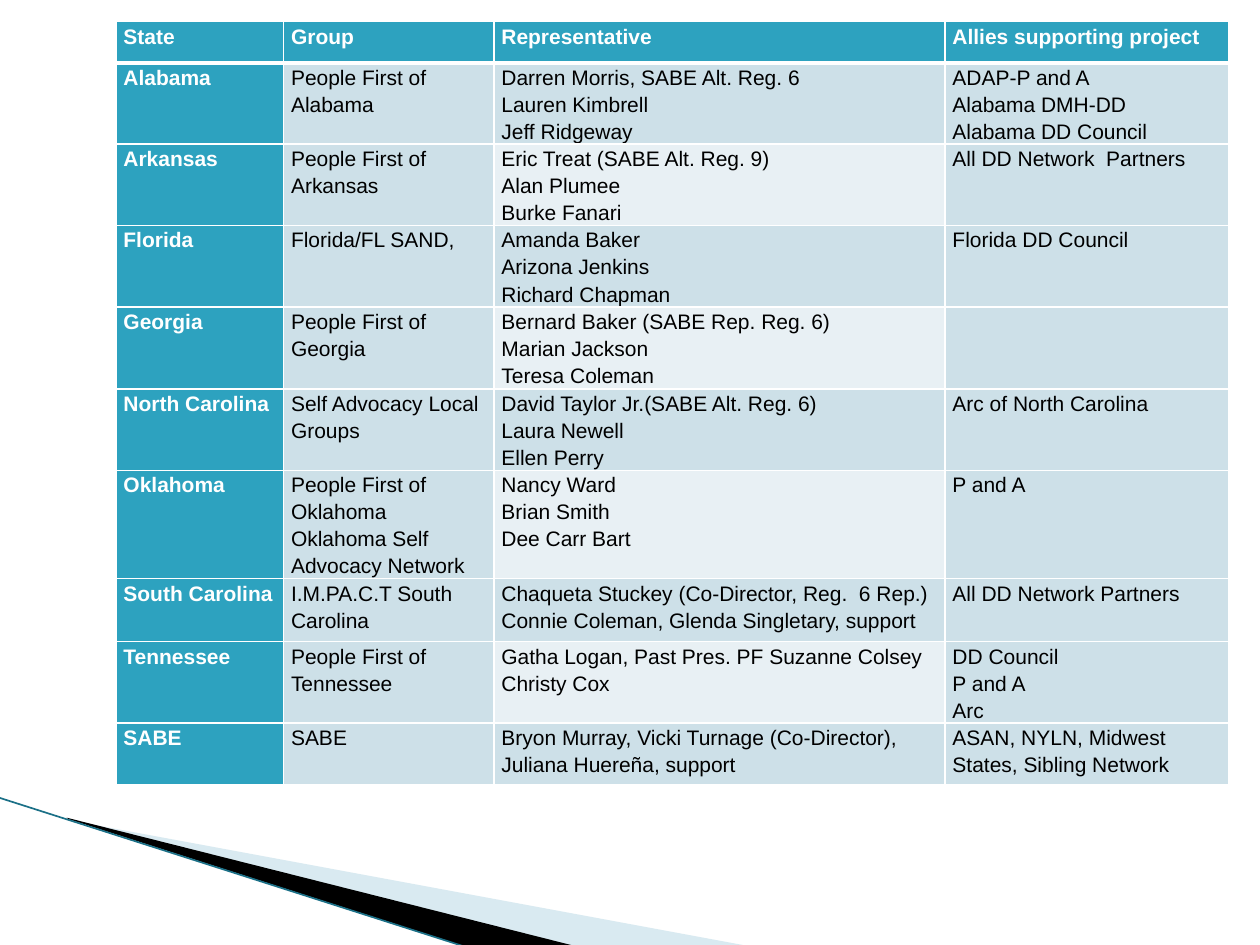
import pptx
import pptx.util
import pptx.dml.color
import pptx.enum.shapes
import pptx.oxml
import pptx.oxml.ns

Inches, Pt = pptx.util.Inches, pptx.util.Pt
RGBColor = pptx.dml.color.RGBColor
qn = pptx.oxml.ns.qn

WHITE = RGBColor(0xFF, 0xFF, 0xFF)
BLACK = RGBColor(0x00, 0x00, 0x00)
TEAL = RGBColor(0x2D, 0xA2, 0xBF)
DARK_TEAL = RGBColor(0x1B, 0x70, 0x87)
PALE_BLUE = RGBColor(0xA0, 0xCB, 0xDC)
BAND = RGBColor(0xCD, 0xE0, 0xE8)
LIGHT_BAND = RGBColor(0xE8, 0xF0, 0xF4)

# Content: one tuple per row, a new line starts a new paragraph
ROWS = [
    ("State", "Group", "Representative", "Allies supporting project"),
    ("Alabama", "People First of Alabama",
     "Darren Morris, SABE Alt. Reg. 6\nLauren Kimbrell\nJeff Ridgeway",
     "ADAP-P and A\nAlabama DMH-DD\nAlabama DD Council"),
    ("Arkansas", "People First of Arkansas",
     "Eric Treat (SABE Alt. Reg. 9)\nAlan Plumee\nBurke Fanari",
     "All DD Network  Partners"),
    ("Florida", "Florida/FL SAND,",
     "Amanda Baker\nArizona Jenkins\nRichard Chapman", "Florida DD Council"),
    ("Georgia", "People First of Georgia",
     "Bernard Baker (SABE Rep. Reg. 6)\nMarian Jackson\nTeresa Coleman", ""),
    ("North Carolina", "Self Advocacy Local Groups",
     "David Taylor Jr.(SABE Alt. Reg. 6)\nLaura Newell\nEllen Perry",
     "Arc of North Carolina"),
    ("Oklahoma", "People First of Oklahoma\nOklahoma Self Advocacy Network",
     "Nancy Ward\nBrian Smith\nDee Carr Bart", "P and A"),
    ("South Carolina", "I.M.PA.C.T South Carolina",
     "Chaqueta Stuckey (Co-Director, Reg.  6 Rep.)\n"
     "Connie Coleman, Glenda Singletary, support",
     "All DD Network Partners"),
    ("Tennessee", "People First of Tennessee",
     "Gatha Logan, Past Pres. PF Suzanne Colsey\nChristy Cox",
     "DD Council\nP and A\nArc"),
    ("SABE", "SABE",
     "Bryon Murray, Vicki Turnage (Co-Director), Juliana Huereña, support",
     "ASAN, NYLN, Midwest States, Sibling Network"),
]
COLUMN_WIDTHS = [1.33, 1.67, 3.58, 2.25]
ROW_HEIGHTS = [0.33, 0.64, 0.64, 0.65, 0.65, 0.64, 0.86, 0.5, 0.64, 0.49]
TABLE_LEFT, TABLE_TOP = 0.92, 0.17
REPRESENTATIVE = 2

# Corner wedges: outline, colour, opacity in percent
WEDGES = [
    ([(0.55, 6.51), (5.95, 7.51), (4.56, 7.51), (0.55, 6.5)], PALE_BLUE, 40),
    ([(0.53, 6.49), (4.57, 7.51), (3.72, 7.52), (0.54, 6.5)], BLACK, 100),
]
EDGE = (-0.01, 6.33, 3.71, 7.52)

CELL_FORMAT = {"margin_left": Inches(0.06), "margin_right": Inches(0.06),
               "margin_top": 0, "margin_bottom": 0}
FONT_FORMAT = {"name": "Arial", "size": Pt(12)}


def apply_format(target, values):
    for attribute, value in values.items():
        setattr(target, attribute, value)


def add_wedge(slide, outline, color, opacity):
    start, *corners = [(Inches(x), Inches(y)) for x, y in outline]
    builder = slide.shapes.build_freeform(*start)
    builder.add_line_segments(corners, close=True)
    wedge = builder.convert_to_shape()
    wedge.shadow.inherit = False
    wedge.fill.solid()
    wedge.fill.fore_color.rgb = color
    wedge.line.fill.background()
    if opacity < 100:
        srgb = wedge._element.spPr.find(".//" + qn("a:srgbClr"))
        srgb.append(pptx.oxml.parse_xml(
            f'<a:alpha {pptx.oxml.ns.nsdecls("a")} val="{opacity * 1000}"/>'))


def add_edge(slide):
    edge = slide.shapes.add_connector(
        pptx.enum.shapes.MSO_CONNECTOR.STRAIGHT, *map(Inches, EDGE))
    edge.line.color.rgb = DARK_TEAL
    edge.line.width = Pt(0.95)
    edge._element.spPr.append(pptx.oxml.parse_xml(
        f'<a:effectLst {pptx.oxml.ns.nsdecls("a")}/>'))


def set_borders(cell, row):
    # The rule between the header and the first state is heavier
    widths = {"lnL": 1, "lnR": 1,
              "lnT": 3 if row == 1 else 1, "lnB": 3 if row == 0 else 1}
    properties = cell._tc.get_or_add_tcPr()
    for position, (side, width) in enumerate(widths.items()):
        properties.insert(position, pptx.oxml.parse_xml(
            f'<a:{side} {pptx.oxml.ns.nsdecls("a")} w="{Pt(width)}">'
            f'<a:solidFill><a:srgbClr val="{WHITE}"/></a:solidFill></a:{side}>'))


def fill_color(row, column):
    if row == 0 or column == 0:
        return TEAL
    return LIGHT_BAND if column == REPRESENTATIVE and row % 2 == 0 else BAND


def write_cell(cell, text, row, column):
    heading = row == 0 or column == 0
    apply_format(cell, CELL_FORMAT)
    cell.fill.solid()
    cell.fill.fore_color.rgb = fill_color(row, column)
    set_borders(cell, row)
    cell.text = text
    for paragraph in cell.text_frame.paragraphs:
        paragraph.line_spacing = 1.15
        for run in paragraph.runs:
            apply_format(run.font, {**FONT_FORMAT, "bold": heading})
            run.font.color.rgb = WHITE if heading else BLACK


def add_state_table(slide):
    states = slide.shapes.add_table(
        len(ROWS), len(COLUMN_WIDTHS), Inches(TABLE_LEFT), Inches(TABLE_TOP),
        Inches(sum(COLUMN_WIDTHS)), Inches(sum(ROW_HEIGHTS))).table
    for column, width in zip(states.columns, COLUMN_WIDTHS):
        column.width = Inches(width)
    for row, height in zip(states.rows, ROW_HEIGHTS):
        row.height = Inches(height)
    for r, texts in enumerate(ROWS):
        for c, text in enumerate(texts):
            write_cell(states.cell(r, c), text, r, c)


def main():
    deck = pptx.Presentation()
    deck.slide_width, deck.slide_height = Inches(10), Inches(7.5)
    slide = deck.slides.add_slide(deck.slide_layouts[6])

    # Corner decoration, then the table
    for wedge in WEDGES:
        add_wedge(slide, *wedge)
    add_edge(slide)
    add_state_table(slide)
    deck.save("out.pptx")


if __name__ == "__main__":
    main()
